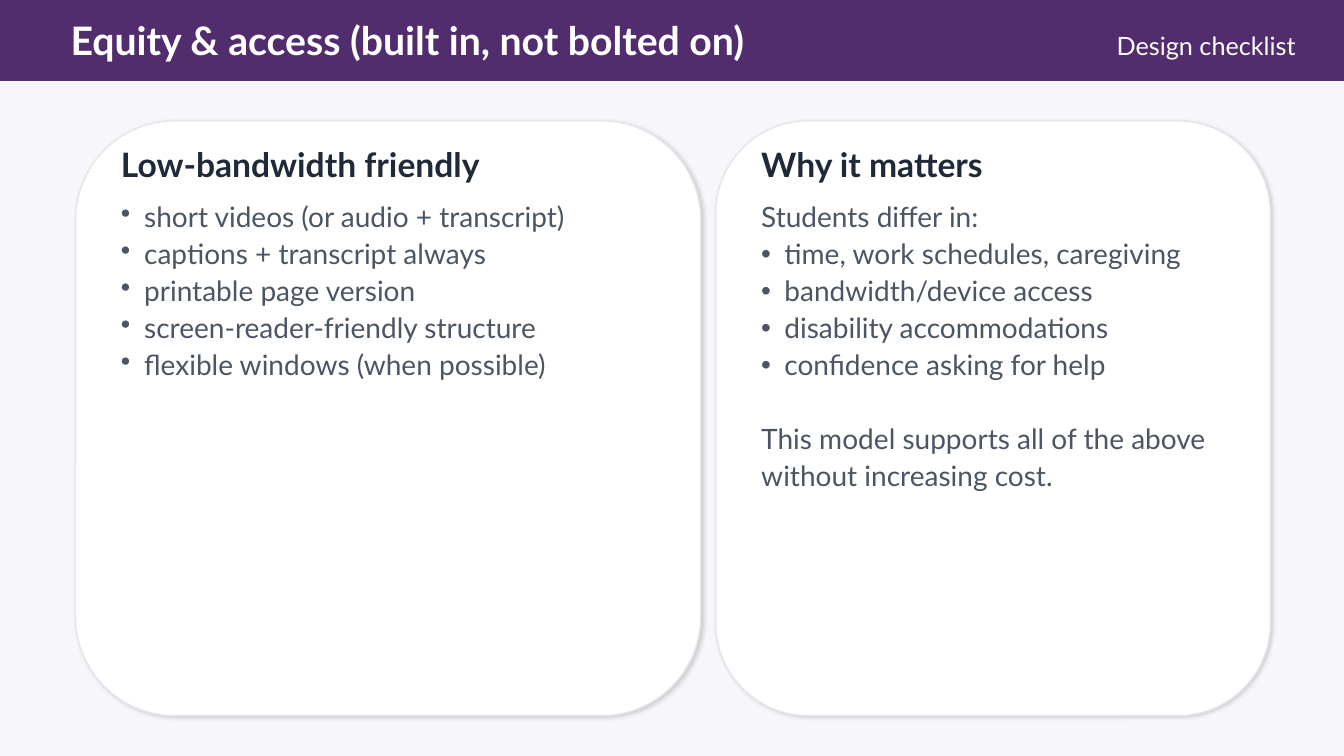
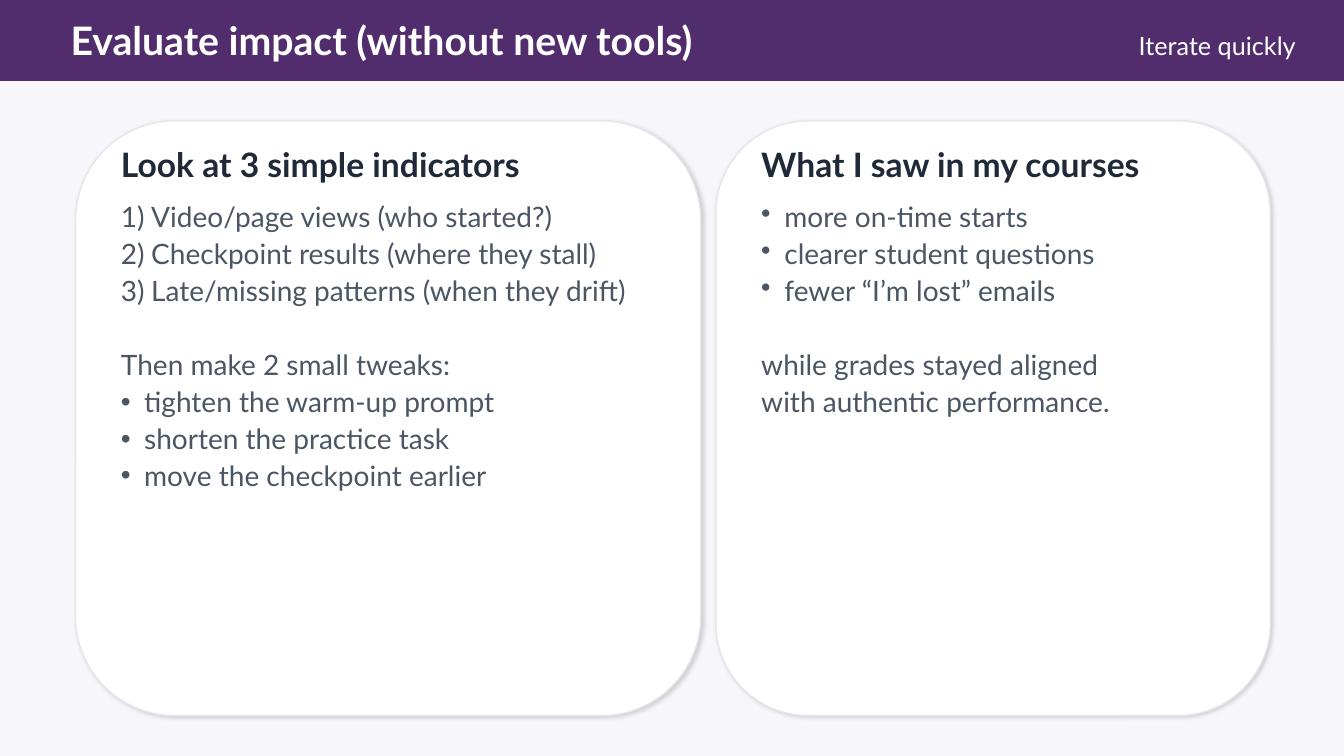
from dataclasses import dataclass
from enum import Enum

from lxml.etree import SubElement
from pptx import Presentation
from pptx.dml.color import RGBColor
from pptx.enum.shapes import MSO_SHAPE as Form
from pptx.enum.text import MSO_ANCHOR as Anchor, MSO_AUTO_SIZE as Fit, PP_ALIGN as Align
from pptx.oxml.ns import qn
from pptx.shapes.autoshape import Shape
from pptx.slide import Slide
from pptx.text.text import TextFrame, _Paragraph as Para
from pptx.util import Emu, Pt

PX = 9144
WIDE, HIGH = 1333, 750
FONT = "Lato"
PURPLE = RGBColor(0x51, 0x2D, 0x6D)
WHITE = RGBColor(0xFF, 0xFF, 0xFF)
PAPER = RGBColor(0xF7, 0xF7, 0xFB)
EDGE = RGBColor(0xE5, 0xE7, 0xEB)
INK = RGBColor(0x1F, 0x29, 0x37)
GREY = RGBColor(0x4B, 0x55, 0x63)
GAP = Pt(26.4)


class Mark(Enum):
    NONE = 0
    DOT = 23
    NUM = 30


@dataclass(frozen=True)
class Box:
    left: int
    top: int
    width: int
    height: int


@dataclass(frozen=True)
class Style:
    size: int
    color: RGBColor
    bold: bool = False
    align: Align = Align.LEFT
    anchor: Anchor = Anchor.MIDDLE
    space: float = 1.0


@dataclass(frozen=True)
class Group:
    lines: tuple[str, ...]
    mark: Mark = Mark.NONE
    gap: bool = False


@dataclass(frozen=True)
class Card:
    head: str
    groups: tuple[Group, ...]


@dataclass(frozen=True)
class Page:
    title: str
    label: str
    cards: tuple[Card, Card]


TITLE = Style(28, WHITE, bold=True)
LABEL = Style(18, WHITE, align=Align.RIGHT)
HEAD = Style(24, INK, bold=True)
BODY = Style(20, GREY, anchor=Anchor.TOP, space=1.1)

BAND = Box(0, 0, WIDE, 80)
CARDS = (Box(75, 120, 620, 590), Box(710, 120, 550, 590))
PAD = 35

PAGES = (
    Page("Equity & access (built in, not bolted on)", "Design checklist", (
        Card("Low-bandwidth friendly", (
            Group((
                "short videos (or audio + transcript)",
                "captions + transcript always",
                "printable page version",
                "screen-reader-friendly structure",
                "flexible windows (when possible)",
            ), Mark.DOT),
        )),
        Card("Why it matters", (
            Group(("Students differ in:",)),
            Group((
                "time, work schedules, caregiving",
                "bandwidth/device access",
                "disability accommodations",
                "confidence asking for help",
            ), Mark.DOT),
            Group((
                "This model supports all of the above",
                "without increasing cost.",
            ), gap=True),
        )),
    )),
    Page("Evaluate impact (without new tools)", "Iterate quickly", (
        Card("Look at 3 simple indicators", (
            Group((
                "Video/page views (who started?)",
                "Checkpoint results (where they stall)",
                "Late/missing patterns (when they drift)",
            ), Mark.NUM),
            Group(("Then make 2 small tweaks:",), gap=True),
            Group((
                "tighten the warm-up prompt",
                "shorten the practice task",
                "move the checkpoint earlier",
            ), Mark.DOT),
        )),
        Card("What I saw in my courses", (
            Group((
                "more on-time starts",
                "clearer student questions",
                "fewer “I’m lost” emails",
            ), Mark.DOT),
            Group((
                "while grades stayed aligned",
                "with authentic performance.",
            ), gap=True),
        )),
    )),
)


def scale(box: Box) -> tuple[Emu, ...]:
    return tuple(Emu(n * PX) for n in (box.left, box.top, box.width, box.height))


def place(shape: Shape, box: Box) -> TextFrame:
    shape.left, shape.top, shape.width, shape.height = scale(box)
    return shape.text_frame


def set_mark(para: Para, mark: Mark) -> None:
    props = para._p.get_or_add_pPr()
    props.set("marL", str(mark.value * PX))
    props.set("indent", str(-mark.value * PX))
    if mark is Mark.NONE:
        SubElement(props, qn("a:buNone"))
        return
    SubElement(props, qn("a:buFontTx"))
    if mark is Mark.DOT:
        SubElement(props, qn("a:buChar"), char="•")
    else:
        SubElement(props, qn("a:buAutoNum"), type="arabicParenR")


def set_style(para: Para, style: Style) -> None:
    para.alignment = style.align
    para.line_spacing = style.space
    para.space_before = para.space_after = Pt(0)
    for run in para.runs:
        font = run.font
        font.name, font.size, font.bold = FONT, Pt(style.size), style.bold
        font.color.rgb = style.color


def write(frame: TextFrame, style: Style, groups: tuple[Group, ...]) -> None:
    frame.text = "\n".join(line for group in groups for line in group.lines)
    frame.word_wrap = True
    frame.auto_size = Fit.NONE
    frame.vertical_anchor = style.anchor
    paras = iter(frame.paragraphs)
    for group in groups:
        for spot in range(len(group.lines)):
            para = next(paras)
            set_mark(para, group.mark)
            set_style(para, style)
            if group.gap and spot == 0:
                para.space_before = GAP


def add_panel(slide: Slide, form: Form, box: Box, fill: RGBColor, edge: RGBColor) -> Shape:
    panel = slide.shapes.add_shape(form, *scale(box))
    panel.fill.solid()
    panel.fill.fore_color.rgb = fill
    panel.line.color.rgb = edge
    panel.line.width = Pt(1)
    panel.shadow.inherit = False
    panel.element.getparent().insert(2, panel.element)
    return panel


def add_shade(panel: Shape) -> None:
    effects = panel.element.spPr.find(qn("a:effectLst"))
    shade = SubElement(effects, qn("a:outerShdw"), blurRad=str(Pt(3)), dist=str(Pt(1.5)),
                       dir="2700000", algn="ctr", rotWithShape="0")
    color = SubElement(shade, qn("a:srgbClr"), val="000000")
    SubElement(color, qn("a:alpha"), val="16000")


def add_card(slide: Slide, card: Card, box: Box, slot: int) -> None:
    add_shade(add_panel(slide, Form.ROUNDED_RECTANGLE, box, WHITE, EDGE))
    left, width = box.left + PAD, box.width - 2 * PAD
    holders = {item.placeholder_format.idx: item for item in slide.placeholders}
    head = place(holders[slot], Box(left, box.top + 25, width, 35))
    write(head, HEAD, (Group((card.head,)),))
    body = place(holders[slot + 1], Box(left, box.top + 70, width, 495))
    write(body, BODY, card.groups)


def add_page(deck: Presentation, page: Page) -> None:
    slide = deck.slides.add_slide(deck.slide_layouts.get_by_name("Comparison"))
    add_panel(slide, Form.RECTANGLE, BAND, PURPLE, PURPLE)
    title = place(slide.shapes.title, Box(60, 14, 925, 50))
    write(title, TITLE, (Group((page.title,)),))
    label = slide.shapes.add_textbox(*scale(Box(995, 20, 300, 50)))
    write(label.text_frame, LABEL, (Group((page.label,)),))
    for spot, (card, box) in enumerate(zip(page.cards, CARDS)):
        add_card(slide, card, box, 2 * spot + 1)


def main() -> None:
    deck = Presentation()
    deck.slide_width, deck.slide_height = Emu(WIDE * PX), Emu(HIGH * PX)
    back = deck.slide_master.background.fill
    back.solid()
    back.fore_color.rgb = PAPER
    for page in PAGES:
        add_page(deck, page)
    deck.save("out.pptx")


if __name__ == "__main__":
    main()
